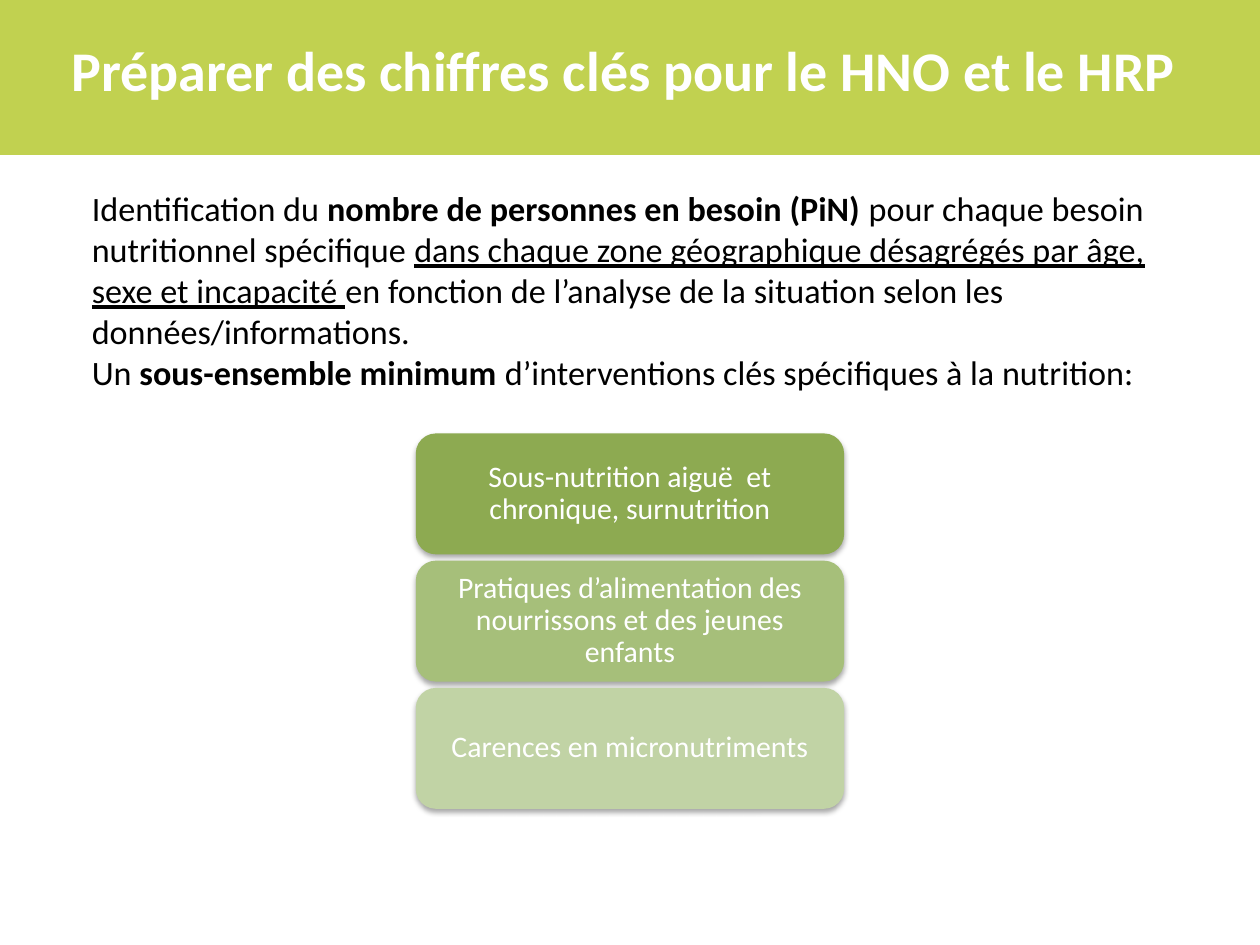
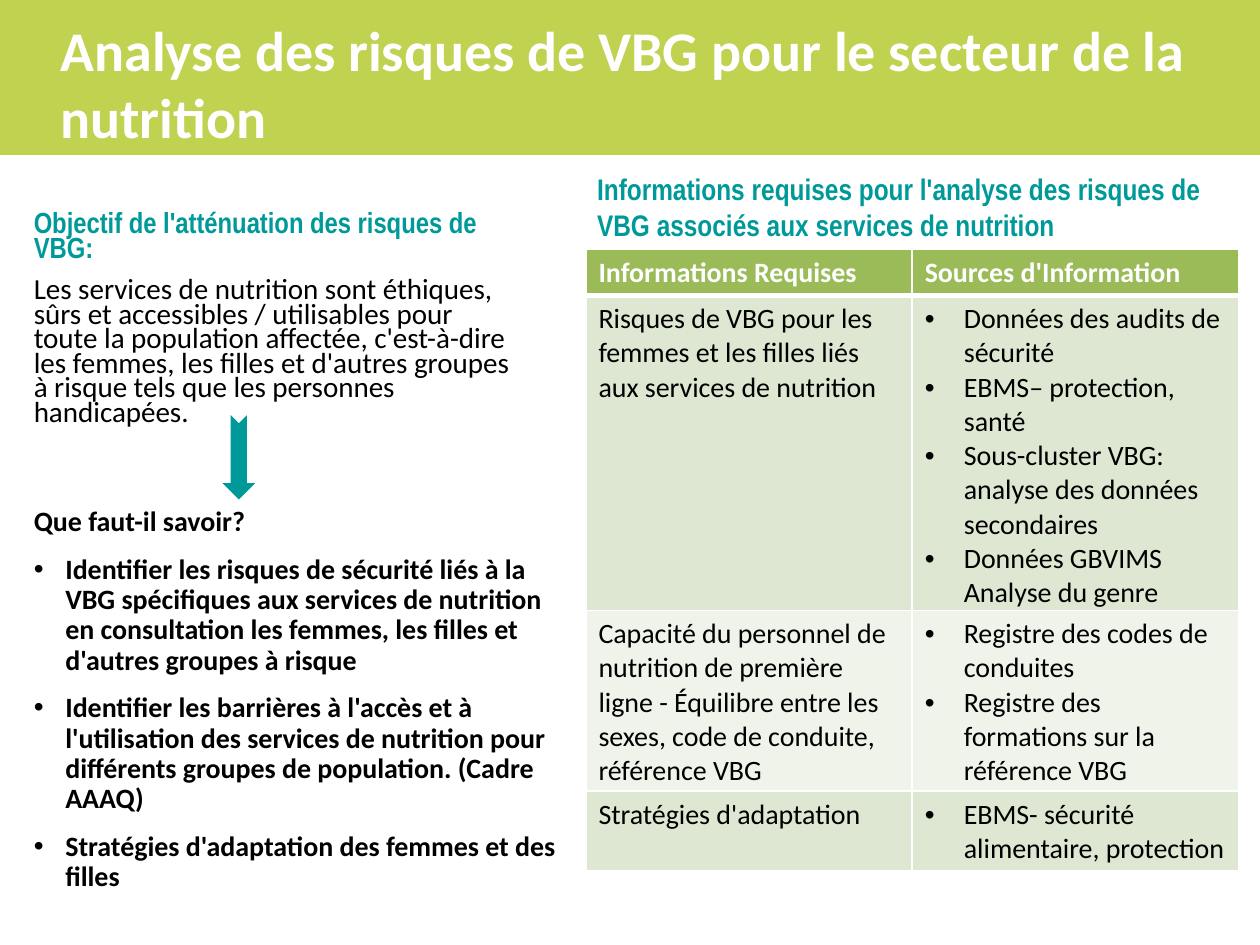
"""Build two slides on nutrition figures and GBV risk analysis."""
from lxml.etree import SubElement as Sub
from pptx import Presentation
from pptx.dml.color import RGBColor as RGB
from pptx.enum.shapes import MSO_SHAPE as SHAPE
from pptx.enum.text import MSO_ANCHOR as ANCHOR, MSO_AUTO_SIZE as AUTO, PP_ALIGN as ALIGN
from pptx.oxml import parse_xml
from pptx.oxml.ns import nsdecls, qn
from pptx.util import Inches, Pt

HUES = {
    "band": "C1D150", "white": "FFFFFF", "black": "000000", "teal": "009999",
    "dark": "8DAA51", "mid": "A6BF7A", "pale": "C1D3A5",
    "head": "9BBB59", "odd": "DEE7D1", "even": "EFF3EA",
}


def style(par, size, hue="black", bold=False, face="Calibri"):
    for run in par.runs:
        font = run.font
        font.size, font.bold, font.name = Pt(size), bold, face
        font.color.rgb = RGB.from_string(HUES[hue])


def bullet(par, indent):
    props = par._p.get_or_add_pPr()
    props.set("marL", str(Inches(indent)))
    props.set("indent", str(-Inches(indent)))
    Sub(props, qn("a:buFont")).set("typeface", "Arial")
    Sub(props, qn("a:buChar")).set("char", "•")


prs = Presentation()
prs.slide_width, prs.slide_height = Inches(10), Inches(7.5)
layout = prs.slide_layouts[5]

titles = [
    ("Préparer des chiffres clés pour le HNO et le HRP ", (0, 0.23, 10, 1.53), ALIGN.CENTER),
    ("Analyse des risques de VBG pour le secteur de la nutrition ", (0.38, 0.07, 9.25, 1.18), ALIGN.LEFT),
]
slides = []
for text, spot, align in titles:
    slide = prs.slides.add_slide(layout)
    title = slide.shapes.title
    title.left, title.top, title.width, title.height = map(Inches, spot)
    frame = title.text_frame
    frame.text = text
    frame.word_wrap, frame.auto_size = True, AUTO.NONE
    frame.vertical_anchor = ANCHOR.TOP
    frame.paragraphs[0].alignment = align
    style(frame.paragraphs[0], 32, "white", True)
    slides.append(slide)
needs, risks = slides

band = needs.shapes.add_shape(SHAPE.RECTANGLE, 0, Inches(-0.02), Inches(10), Inches(1.25))
band.shadow.inherit = False
band.fill.solid()
band.fill.fore_color.rgb = RGB.from_string(HUES["band"])
band.line.fill.background()
layout.shapes[0].element.addprevious(band.element)

groups = [
    ("Sous-nutrition aiguë  et chronique, surnutrition", "dark"),
    ("Pratiques d’alimentation des nourrissons et des jeunes enfants", "mid"),
    ("Carences en micronutriments", "pale"),
]
for row, (text, hue) in enumerate(groups):
    box = needs.shapes.add_shape(
        SHAPE.ROUNDED_RECTANGLE, Inches(3.3), Inches(3.44 + 1.01 * row), Inches(3.4), Inches(0.96))
    box.fill.solid()
    box.fill.fore_color.rgb = RGB.from_string(HUES[hue])
    box.line.fill.background()
    box.shadow.inherit = False
    box.element.spPr.find(qn("a:effectLst")).append(parse_xml(
        f'<a:outerShdw {nsdecls("a")} blurRad="{Pt(3.1)}" dist="{Pt(1.8)}" dir="5400000" rotWithShape="0">'
        f'<a:srgbClr val="{HUES["black"]}"><a:alpha val="35000"/></a:srgbClr></a:outerShdw>'))
    frame = box.text_frame
    frame.text = text
    frame.word_wrap, frame.vertical_anchor = True, ANCHOR.MIDDLE
    frame.margin_left = frame.margin_right = Inches(0.12)
    frame.margin_top = frame.margin_bottom = Inches(0.09)
    par = frame.paragraphs[0]
    par.alignment, par.line_spacing = ALIGN.CENTER, 0.9
    style(par, 17, "white")

intro = [
    ("Identification du ", ""),
    ("nombre de personnes en besoin (PiN) ", "b"),
    ("pour chaque besoin nutritionnel spécifique ", ""),
    ("dans chaque zone géographique désagrégés par âge, sexe et incapacité ", "u"),
    ("en fonction de l’analyse de la situation selon les données/informations. ", "n"),
    ("Un ", ""),
    ("sous-ensemble minimum ", "b"),
    ("d’interventions clés spécifiques à la nutrition:", ""),
]
frame = needs.shapes.add_textbox(Inches(0.63), Inches(1.44), Inches(8.75), Inches(1.74)).text_frame
frame.word_wrap = True
par = frame.paragraphs[0]
for text, mark in intro:
    par.add_run().text = text
    if mark == "n":
        par.add_line_break()
style(par, 19.5)
for run, (text, mark) in zip(par.runs, intro):
    run.font.bold, run.font.underline = mark == "b", mark == "u"

know = [
    "Que faut-il savoir?",
    "Identifier les risques de sécurité liés à la VBG spécifiques aux services de nutrition "
    "en consultation les femmes, les filles et d'autres groupes à risque",
    "Identifier les barrières à l'accès et à l'utilisation des services de nutrition "
    "pour différents groupes de population. (Cadre AAAQ)",
    "Stratégies d'adaptation des femmes et des filles",
]
goal = [
    "Objectif de l'atténuation des risques de VBG: ",
    "Les services de nutrition sont éthiques, sûrs et accessibles / utilisables pour toute la "
    "population affectée, c'est-à-dire les femmes, les filles et d'autres groupes à risque "
    "tels que les personnes handicapées.",
]
lead = ["Informations requises pour l'analyse des risques de VBG associés aux services de nutrition"]
teal = ("teal", True, "Arial Narrow")
notes = [
    (know, (0.17, 3.98, 4.35, 1.92), 16, 0.9, ("black", True), ("black", True)),
    (goal, (0.17, 1.65, 4.04, 1.89), 16.6, 0.7, teal, ()),
    (lead, (4.64, 1.31, 4.99, 0.67), 17, 1.0, teal, ()),
]
for lines, spot, size, space, first, rest in notes:
    frame = risks.shapes.add_textbox(*map(Inches, spot)).text_frame
    frame.word_wrap = True
    frame.text = "\n".join(lines)
    for num, par in enumerate(frame.paragraphs):
        par.line_spacing = space
        par.space_before = Pt(0 if lines is lead else 10)
        style(par, size, *(rest if num else first))
        if lines is know and num:
            bullet(par, 0.25)

arrow = risks.shapes.add_shape(
    SHAPE.NOTCHED_RIGHT_ARROW, Inches(1.56), Inches(3.5), Inches(0.67), Inches(0.26))
arrow.rotation = 90
arrow.shadow.inherit = False
arrow.fill.solid()
arrow.fill.fore_color.rgb = RGB.from_string(HUES["teal"])
arrow.line.fill.background()

rows = [
    (0.36, "head", "Informations Requises", ["Sources d'Information"]),
    (2.48, "odd", "Risques de VBG pour les femmes et les filles liés aux services de nutrition", [
        "Données des audits de sécurité",
        "EBMS– protection, santé",
        "Sous-cluster VBG: analyse des données secondaires",
        "Données GBVIMS  Analyse du genre"]),
    (1.43, "even", "Capacité du personnel de nutrition de première ligne - Équilibre entre les sexes, "
     "code de conduite, référence VBG", [
         "Registre des codes de conduites",
         "Registre des formations sur la référence VBG"]),
    (0.62, "odd", "Stratégies d'adaptation", ["EBMS- sécurité alimentaire, protection"]),
]
grid = risks.shapes.add_table(
    len(rows), 2, Inches(4.65), Inches(1.98), Inches(5.18), Inches(4.89)).table
for row, (high, hue, need, source) in enumerate(rows):
    grid.rows[row].height = Inches(high)
    for col, lines in enumerate(([need], source)):
        cell = grid.cell(row, col)
        cell.fill.solid()
        cell.fill.fore_color.rgb = RGB.from_string(HUES[hue])
        props = cell._tc.get_or_add_tcPr()
        for num, side in enumerate("LRTB"):
            wide = 3 if (row, side) in ((0, "B"), (1, "T")) else 1
            props.insert(num, parse_xml(
                f'<a:ln{side} {nsdecls("a")} w="{Pt(wide)}"><a:solidFill>'
                f'<a:srgbClr val="{HUES["white"]}"/></a:solidFill></a:ln{side}>'))
        cell.text_frame.text = "\n".join(lines)
        for par in cell.text_frame.paragraphs:
            style(par, 16, "black" if row else "white", row == 0)
            if row and col:
                bullet(par, 0.31)

prs.save("out.pptx")
